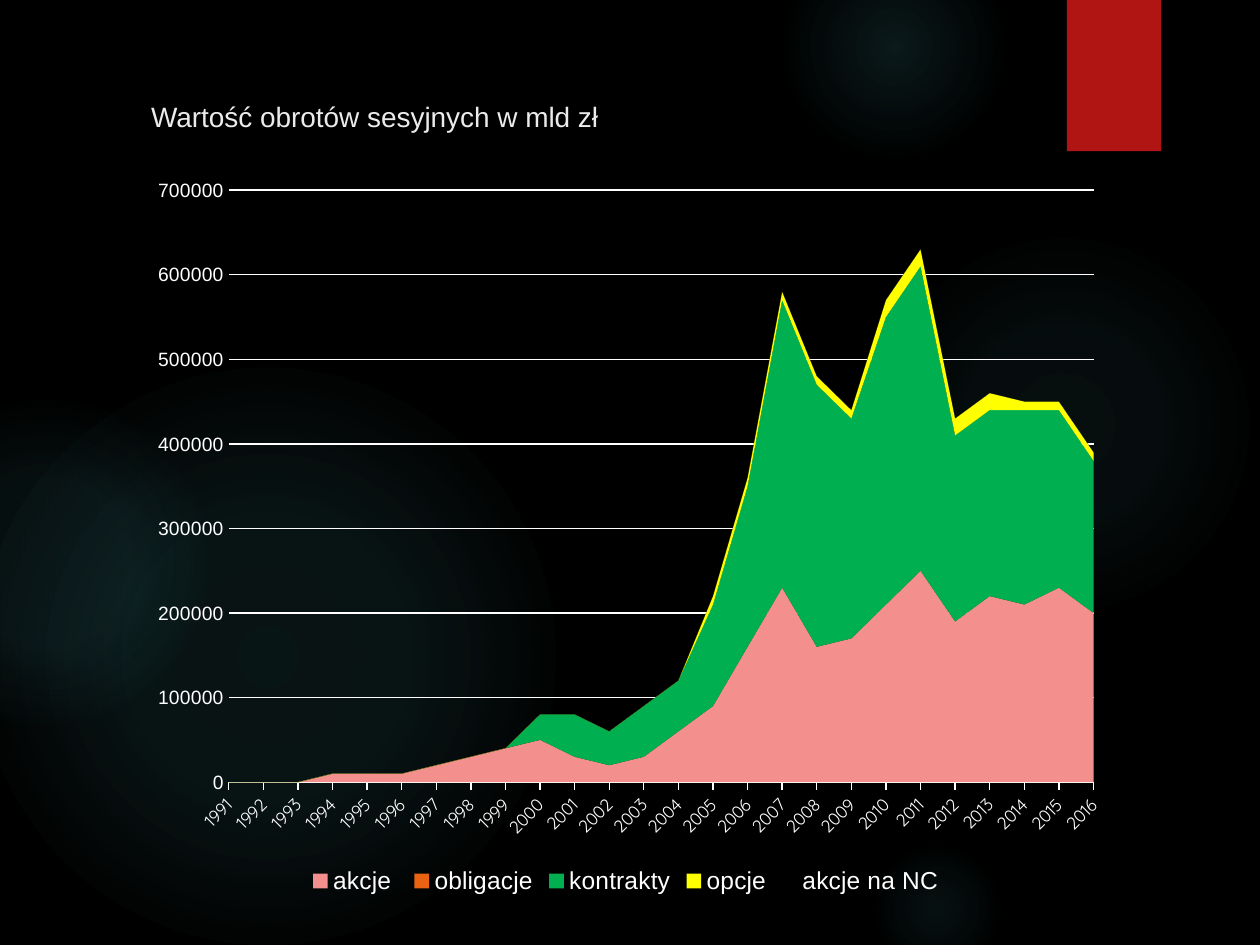
from lxml import etree
from pptx import Presentation
from pptx.chart.data import CategoryChartData
from pptx.dml.color import RGBColor
from pptx.enum import chart as ch, shapes, text
from pptx.oxml import parse_xml
from pptx.oxml.ns import nsdecls, qn
from pptx.util import Cm, Pt

TITLE = "Wartość obrotów sesyjnych w mld zł"
YEARS = [str(y) for y in range(1991, 2017)]
# name, colour, first year with data, values in ten thousands
SERIES = [
    ("akcje ", "F38F8D", 1991, [0, 0, 0, 1, 1, 1, 2, 3, 4, 5, 3, 2, 3, 6, 9, 16,
                                23, 16, 17, 21, 25, 19, 22, 21, 23, 20]),
    ("obligacje", "EA6312", 1992, [0] * 25),
    ("kontrakty", "00B050", 1998, [0, 0, 3, 5, 4, 6, 6, 12, 19, 34, 31, 26,
                                   34, 36, 22, 22, 23, 21, 18]),
    ("opcje", "FFFF00", 2003, [0, 0, 1, 1, 1, 1, 1, 2, 2, 2, 2, 1, 1, 1]),
    ("akcje na NC ", "000000", 2009, [0] * 8),
]
# left, top, diameter in cm; (position %, opacity %) stops
GLOWS = [
    (17.5, 4.65, 7.82, [(0, 7), (36, 6), (69, 0)]),
    (15.8, -1.27, 4.45, [(0, 14), (36, 7), (73, 0)]),
    (17.5, 16.94, 2.74, [(0, 9), (36, 5), (66, 0)]),
    (-0.43, 7.42, 11.63, [(0, 11), (36, 10), (75, 0)]),
    (-2.34, 8.05, 6.55, [(0, 8), (36, 8), (72, 0)]),
]
THEME = dict(back="000000", glow="50B9C1", tab="B01513", title="EBEBEB",
             ink="FFFFFF", font="Arial", thin="Quicksand",
             big=16, key=14, val=11, cat=10, line=0.75)
LEFT, WIDE = 2.79, 19.79
PLOT = dict(x=0.092, y=0.034, w=0.881, h=0.806)


def rgb(name):
    return RGBColor.from_string(THEME.get(name, name))


def style(font, size, color="ink", face="font"):
    font.size, font.name = Pt(THEME[size]), THEME[face]
    font.color.rgb = rgb(color)


def stroke(line):
    line.color.rgb, line.width = rgb("ink"), Pt(THEME["line"])


def block(slide, kind, *box):
    shape = slide.shapes.add_shape(kind, *map(Cm, box))
    shape.shadow.inherit = False
    shape.line.fill.background()
    return shape


def glow(slide, left, top, size, stops):
    shape = block(slide, shapes.MSO_SHAPE.OVAL, left, top, size, size)
    marks = "".join(
        f'<a:gs pos="{pos * 1000}"><a:srgbClr val="{THEME["glow"]}">'
        f'<a:alpha val="{alpha * 1000}"/></a:srgbClr></a:gs>'
        for pos, alpha in stops)
    fill = parse_xml(
        f'<a:gradFill {nsdecls("a")}><a:gsLst>{marks}</a:gsLst>'
        '<a:path path="circle"><a:fillToRect l="50000" t="50000" '
        'r="50000" b="50000"/></a:path></a:gradFill>')
    shape._element.spPr.find(qn("a:prstGeom")).addnext(fill)


def place(chart):
    """Fix the inner plot area as fractions of the chart."""
    area = chart._chartSpace.chart.plotArea
    for old in area.findall(qn("c:layout")):
        area.remove(old)
    layout = etree.Element(qn("c:layout"))
    manual = etree.SubElement(layout, qn("c:manualLayout"))
    rules = dict(layoutTarget="inner", xMode="edge", yMode="edge", **PLOT)
    for tag, val in rules.items():
        etree.SubElement(manual, qn("c:" + tag)).set("val", str(val))
    area.insert(0, layout)


def plot(slide):
    data = CategoryChartData()
    data.categories = YEARS
    for name, _, start, vals in SERIES:
        gap = [None] * (start - int(YEARS[0]))
        data.add_series(name, gap + [v * 10000 for v in vals])
    chart = slide.shapes.add_chart(
        ch.XL_CHART_TYPE.AREA_STACKED, Cm(LEFT), Cm(3.33), Cm(WIDE), Cm(14.81),
        data).chart
    style(chart.font, "cat", face="thin")
    chart.has_title = False
    for item, (_, color, *_) in zip(chart.plots[0].series, SERIES):
        item.format.fill.solid()
        item.format.fill.fore_color.rgb = rgb(color)

    cat, val = chart.category_axis, chart.value_axis
    style(cat.tick_labels.font, "cat", face="thin")
    cat._element.txPr.bodyPr.set("rot", "-2700000")
    cat.has_major_gridlines = False
    cat.major_tick_mark = ch.XL_TICK_MARK.OUTSIDE
    cat.minor_tick_mark = ch.XL_TICK_MARK.NONE
    stroke(cat.format.line)

    style(val.tick_labels.font, "val")
    val.tick_labels.number_format = "0"
    val.tick_labels.number_format_is_linked = False
    val.minimum_scale, val.maximum_scale, val.major_unit = 0, 700000, 100000
    val.major_tick_mark = val.minor_tick_mark = ch.XL_TICK_MARK.NONE
    val.format.line.fill.background()
    val.has_major_gridlines = True
    stroke(val.major_gridlines.format.line)
    val._element.find(qn("c:crossBetween")).set("val", "midCat")

    chart.has_legend = True
    chart.legend.position = ch.XL_LEGEND_POSITION.BOTTOM
    chart.legend.include_in_layout = False
    style(chart.legend.font, "key")
    place(chart)


def head(slide):
    title = slide.shapes.title
    title.left, title.top, title.width, title.height = map(
        Cm, (LEFT, 1.88, WIDE, 1.85))
    frame = title.text_frame
    frame.text = TITLE
    frame.vertical_anchor = text.MSO_ANCHOR.TOP
    para = frame.paragraphs[0]
    para.alignment = text.PP_ALIGN.LEFT
    style(para.font, "big", "title")
    slide.shapes._spTree.append(title._element)  # above the glows


def main():
    deck = Presentation()
    deck.slide_width, deck.slide_height = Cm(25.4), Cm(19.05)
    slide = deck.slides.add_slide(deck.slide_layouts[5])
    slide.background.fill.solid()
    slide.background.fill.fore_color.rgb = rgb("back")
    for spot in GLOWS:
        glow(slide, *spot)
    tab = block(slide, shapes.MSO_SHAPE.RECTANGLE, 21.51, 0, 1.9, 3.05)
    tab.fill.solid()
    tab.fill.fore_color.rgb = rgb("tab")
    head(slide)
    plot(slide)
    deck.save("out.pptx")


if __name__ == "__main__":
    main()
